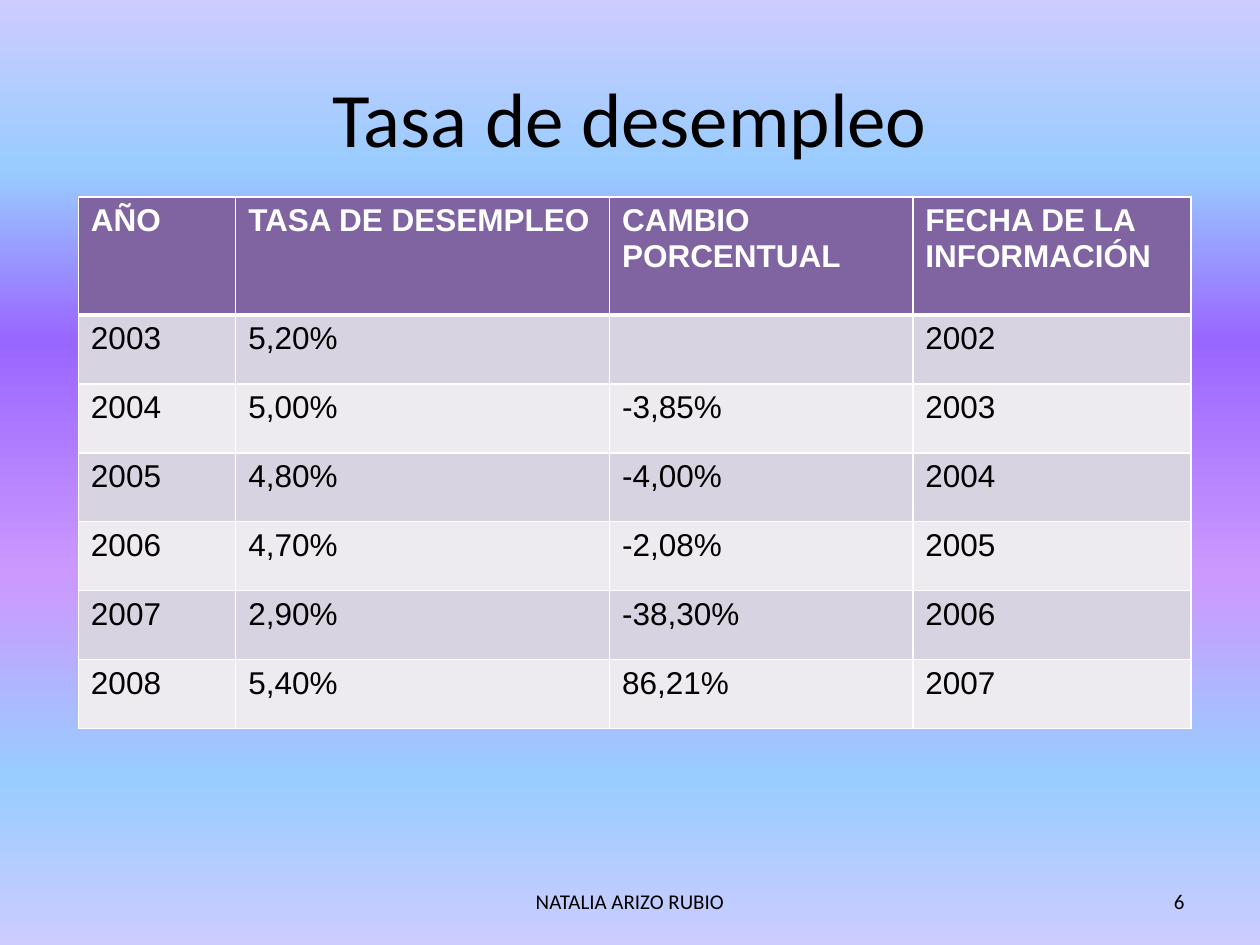
import dataclasses

import pptx
import pptx.dml.color
import pptx.enum.text
import pptx.oxml
import pptx.oxml.ns
import pptx.util
from lxml import etree
from pptx.util import Cm, Pt

ANCHOR = pptx.enum.text.MSO_ANCHOR
ALIGN = pptx.enum.text.PP_ALIGN
qn = pptx.oxml.ns.qn


@dataclasses.dataclass(frozen=True)
class Theme:
    ink: str = "000000"
    light: str = "FFFFFF"
    header: str = "8064A2"
    bands: tuple = ("D8D3E0", "EDEAF0")
    sky: tuple = (
        (0, "CCCCFF"), (18, "99CCFF"), (36, "9966FF"),
        (61, "CC99FF"), (82, "99CCFF"), (100, "CCCCFF"),
    )
    heading_font: str = "Calibri"
    table_font: str = "Arial"
    title_size: int = 44
    table_size: int = 18
    footer_size: int = 12
    rule: int = 1
    header_rule: int = 3


THEME = Theme()

ROWS = [
    ("AÑO", "TASA DE DESEMPLEO", "CAMBIO PORCENTUAL", "FECHA DE LA INFORMACIÓN"),
    ("2003", "5,20%", "", "2002"),
    ("2004", "5,00%", "-3,85%", "2003"),
    ("2005", "4,80%", "-4,00%", "2004"),
    ("2006", "4,70%", "-2,08%", "2005"),
    ("2007", "2,90%", "-38,30%", "2006"),
    ("2008", "5,40%", "86,21%", "2007"),
]
COLUMN_SHARES = (1.25, 2.97, 2.41, 2.21)
HEADER_HEIGHT = 2.38


def apply(target, values):
    for name, value in values.items():
        setattr(target, name, value)


def write(frame, text, font, size, color, bold=False, align=ALIGN.LEFT):
    para = frame.paragraphs[0]
    para.alignment = align
    span = para.add_run()
    span.text = text
    apply(span.font, {"name": font, "size": Pt(size), "bold": bold})
    span.font.color.rgb = pptx.dml.color.RGBColor.from_string(color)


def paint_background(page):
    fill = page.background.fill
    fill.gradient()
    fill.gradient_angle = 270
    stops = page.element.find(".//" + qn("a:gsLst"))
    for stop in list(stops):
        stops.remove(stop)
    for position, color in THEME.sky:
        stop = etree.SubElement(stops, qn("a:gs"), pos=str(position * 1000))
        etree.SubElement(stop, qn("a:srgbClr"), val=color)


def add_title(page, box, text):
    title = page.shapes.title
    apply(title, dict(zip(("left", "top", "width", "height"), map(Cm, box))))
    apply(title.text_frame, {"vertical_anchor": ANCHOR.MIDDLE, "word_wrap": True})
    write(title.text_frame, text, THEME.heading_font, THEME.title_size,
          THEME.ink, align=ALIGN.CENTER)


def style_cell(cell, color, bottom_rule):
    properties = cell._tc.get_or_add_tcPr()
    for side in ("lnL", "lnR", "lnT", "lnB"):
        width = bottom_rule if side == "lnB" else THEME.rule
        line = etree.SubElement(properties, qn("a:" + side), w=str(Pt(width)))
        paint = etree.SubElement(line, qn("a:solidFill"))
        etree.SubElement(paint, qn("a:srgbClr"), val=THEME.light)
    cell.fill.solid()
    cell.fill.fore_color.rgb = pptx.dml.color.RGBColor.from_string(color)


def add_rate_table(page, box, rows):
    left, top, width, height = box
    table = page.shapes.add_table(
        len(rows), len(COLUMN_SHARES), *map(Cm, box)).table
    for column, share in zip(table.columns, COLUMN_SHARES):
        column.width = Cm(width * share / sum(COLUMN_SHARES))
    body_height = (height - HEADER_HEIGHT) / (len(rows) - 1)
    for index, values in enumerate(rows):
        is_header = index == 0
        table.rows[index].height = Cm(HEADER_HEIGHT if is_header else body_height)
        fill = THEME.header if is_header else THEME.bands[(index - 1) % 2]
        bottom_rule = THEME.header_rule if is_header else THEME.rule
        for cell, text in zip(table.rows[index].cells, values):
            style_cell(cell, fill, bottom_rule)
            if text:
                write(cell.text_frame, text, THEME.table_font, THEME.table_size,
                      THEME.light if is_header else THEME.ink, is_header)


def add_footer(page, box, author, number):
    left, top, width, height = box
    parts = (
        (author, 0, 8.04, ALIGN.CENTER),
        (number, width - 5.93, 5.93, ALIGN.RIGHT),
    )
    for text, offset, part_width, align in parts:
        label = page.shapes.add_textbox(
            Cm(left + offset), Cm(top), Cm(part_width), Cm(height))
        apply(label.text_frame,
              {"word_wrap": True, "vertical_anchor": ANCHOR.MIDDLE})
        write(label.text_frame, text, THEME.heading_font, THEME.footer_size,
              THEME.ink, align=align)


def main():
    deck = pptx.Presentation()
    apply(deck, {"slide_width": Cm(25.4), "slide_height": Cm(19.05)})
    page = deck.slides.add_slide(deck.slide_layouts.get_by_name("Title Only"))
    paint_background(page)
    add_title(page, (1.27, 0.76, 22.86, 3.18), "Tasa de desempleo")
    add_rate_table(page, (1.58, 3.97, 22.43, 10.72), ROWS)
    add_footer(page, (8.68, 17.66, 15.45, 1.01), "NATALIA ARIZO RUBIO", "6")
    deck.save("out.pptx")


if __name__ == "__main__":
    main()
